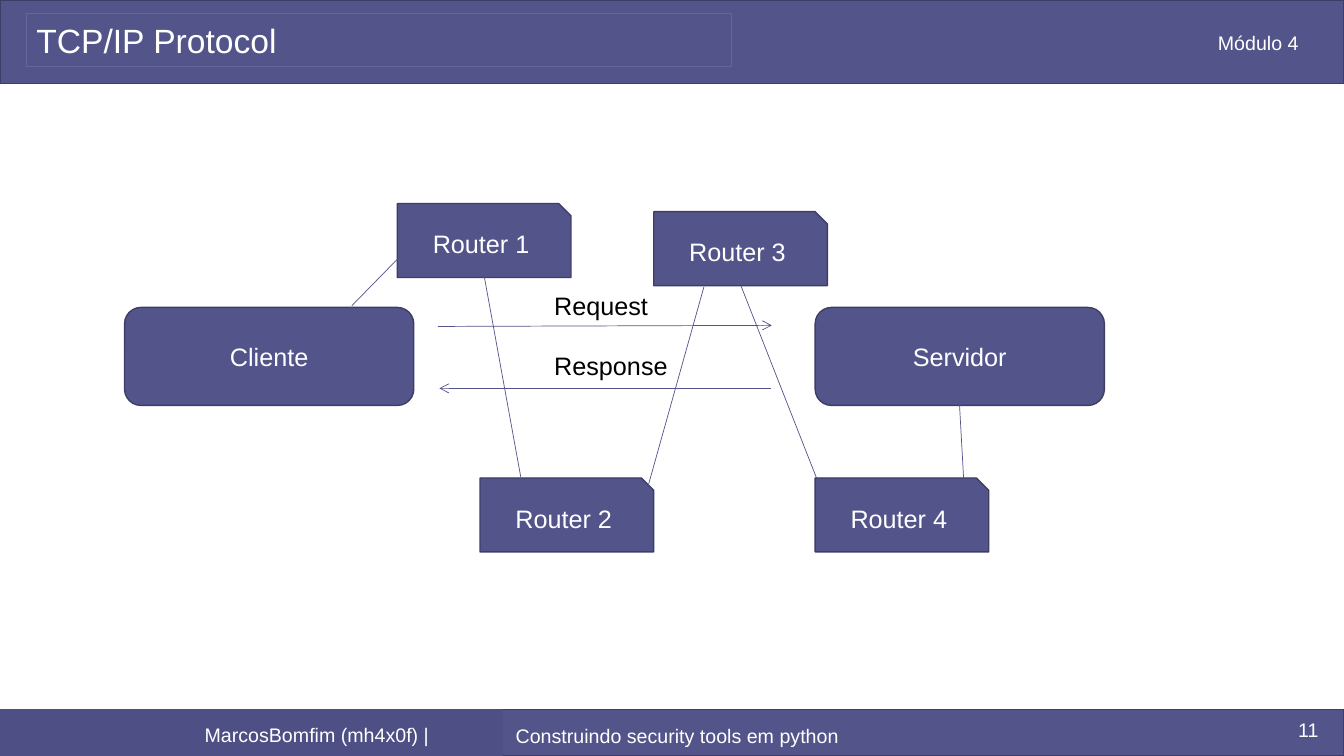
"""Build the TCP/IP protocol slide: client, server and the routers between them."""

import dataclasses
import typing

import lxml.etree
import pptx
import pptx.dml.color
import pptx.enum.shapes
import pptx.enum.text
import pptx.oxml.ns
import pptx.slide
import pptx.util

Pt = pptx.util.Pt
RGBColor = pptx.dml.color.RGBColor
ShapeKind = pptx.enum.shapes.MSO_SHAPE
Align = pptx.enum.text.PP_ALIGN
Anchor = pptx.enum.text.MSO_ANCHOR

WHITE = RGBColor(0xFF, 0xFF, 0xFF)
BLACK = RGBColor(0x00, 0x00, 0x00)
INDIGO = RGBColor(0x53, 0x54, 0x8A)
INDIGO_EDGE = RGBColor(0x3D, 0x3E, 0x66)
FOOTER_INDIGO = RGBColor(0x4E, 0x4F, 0x84)
TITLE_EDGE = RGBColor(0x66, 0x66, 0x99)

SLIDE_WIDTH, SLIDE_HEIGHT = 960, 540
HOST_TOP, HOST_WIDTH, HOST_HEIGHT = 219.6, 206.6, 70
ROUTER_WIDTH, ROUTER_HEIGHT = 124, 52.8
LOWER_ROUTER_TOP = 341.4
SERVER_LEFT = 582.3


@dataclasses.dataclass(frozen=True)
class Block:
    """A filled preset shape with an optional centred caption."""

    kind: ShapeKind
    left: float
    top: float
    width: float
    height: float
    text: str = ""
    fill: RGBColor = INDIGO
    edge: RGBColor = INDIGO_EDGE


@dataclasses.dataclass(frozen=True)
class Label:
    """A text box whose paragraphs share one format."""

    left: float
    top: float
    width: float
    height: float
    lines: tuple[str, ...]
    size: float = 14
    color: RGBColor = WHITE
    align: Align = Align.LEFT
    anchor: Anchor = Anchor.TOP
    wrap: bool = True
    gap: float = 0
    edge: typing.Optional[RGBColor] = None


@dataclasses.dataclass(frozen=True)
class Link:
    """A straight line, with an arrowhead at its end if wanted."""

    start_x: float
    start_y: float
    end_x: float
    end_y: float
    arrow: bool = False


def host(left: float, text: str) -> Block:
    """Return a rounded host block."""
    return Block(ShapeKind.ROUNDED_RECTANGLE, left, HOST_TOP, HOST_WIDTH, HOST_HEIGHT, text)


def router(left: float, top: float, text: str) -> Block:
    """Return a router block with one snipped corner."""
    return Block(ShapeKind.SNIP_1_RECTANGLE, left, top, ROUTER_WIDTH, ROUTER_HEIGHT, text)


BLOCKS = (
    Block(ShapeKind.RECTANGLE, 0, 0, SLIDE_WIDTH, 59.6),
    Block(ShapeKind.RECTANGLE, 0, 507, SLIDE_WIDTH, 33),
    Block(ShapeKind.RECTANGLE, 0, 507, 358.6, 33.5, fill=FOOTER_INDIGO, edge=FOOTER_INDIGO),
    host(89, "Cliente"),
    host(SERVER_LEFT, "Servidor"),
    router(283.9, 145.4, "Router 1"),
    router(342.9, LOWER_ROUTER_TOP, "Router 2"),
    router(467, 151.2, "Router 3"),
    router(SERVER_LEFT, LOWER_ROUTER_TOP, "Router 4"),
)

LABELS = (
    Label(139, 512.6, 226.8, 24.5, ("MarcosBomfim (mh4x0f) |",)),
    Label(841, 18.7, 119.5, 21, ("Módulo 4 ",), align=Align.CENTER),
    Label(18.9, 9.5, 504, 38.2, ("TCP/IP Protocol",), 24, anchor=Anchor.MIDDLE, edge=TITLE_EDGE),
    Label(331.9, 513.4, 303.8, 21, ("Construindo security tools em python",), align=Align.CENTER),
    Label(725, 509, 224, 37.4, ("11",), align=Align.RIGHT),
    Label(388.8, 203.8, 100.8, 72.7, ("Request", "Response"), 18, BLACK, wrap=False, gap=21.5),
)

LINKS = (
    Link(312.7, 233.2, 551.3, 232.4, arrow=True),
    Link(550.8, 277.4, 313.9, 277.4, arrow=True),
    Link(251.3, 218.4, 284, 185),
    Link(346, 198, 372, 340.8),
    Link(463, 347, 502.8, 205),
    Link(529.2, 204, 583.2, 341.3),
    Link(688.3, 341.3, 685.4, 289.4),
)


def apply(target: typing.Any, values: dict[str, typing.Any]) -> None:
    """Set each named attribute on the target."""
    for name, value in values.items():
        setattr(target, name, value)


def write(frame: typing.Any, label: typing.Any, lines: tuple[str, ...], size: float,
          color: RGBColor, align: Align, gap: float = 0) -> None:
    """Fill a text frame with equally formatted paragraphs."""
    for index, line in enumerate(lines):
        paragraph = frame.add_paragraph() if index else frame.paragraphs[0]
        apply(paragraph, {"alignment": align, "space_before": Pt(gap if index else 0)})
        run = paragraph.add_run()
        run.text = line
        apply(run.font, {"name": "Arial", "size": Pt(size)})
        run.font.color.rgb = color


def draw_block(slide: pptx.slide.Slide, block: Block) -> None:
    """Draw a block and its caption."""
    bounds = map(Pt, (block.left, block.top, block.width, block.height))
    shape = slide.shapes.add_shape(block.kind, *bounds)
    shape.shadow.inherit = False
    shape.fill.solid()
    shape.fill.fore_color.rgb = block.fill
    shape.line.color.rgb = block.edge
    shape.line.width = Pt(1)
    if block.text:
        apply(shape.text_frame, {"word_wrap": True, "vertical_anchor": Anchor.MIDDLE})
        write(shape.text_frame, block, (block.text,), 18, WHITE, Align.CENTER)


def draw_label(slide: pptx.slide.Slide, label: Label) -> None:
    """Draw a text box, framed if it has an edge colour."""
    bounds = map(Pt, (label.left, label.top, label.width, label.height))
    shape = slide.shapes.add_textbox(*bounds)
    if label.edge is not None:
        shape.line.color.rgb = label.edge
        shape.line.width = Pt(0.75)
    apply(shape.text_frame, {"word_wrap": label.wrap, "vertical_anchor": label.anchor})
    write(shape.text_frame, label, label.lines, label.size, label.color, label.align, label.gap)


def draw_link(slide: pptx.slide.Slide, link: Link) -> None:
    """Draw a thin connector without a shadow."""
    ends = map(Pt, (link.start_x, link.start_y, link.end_x, link.end_y))
    connector = slide.shapes.add_connector(pptx.enum.shapes.MSO_CONNECTOR.STRAIGHT, *ends)
    connector.line.color.rgb = INDIGO
    connector.line.width = Pt(0.5)
    properties = connector._element.spPr
    if link.arrow:
        outline = properties.find(pptx.oxml.ns.qn("a:ln"))
        lxml.etree.SubElement(outline, pptx.oxml.ns.qn("a:tailEnd"), type="arrow")
    lxml.etree.SubElement(properties, pptx.oxml.ns.qn("a:effectLst"))


def main() -> None:
    """Build and save the presentation."""
    presentation = pptx.Presentation()
    apply(presentation, {"slide_width": Pt(SLIDE_WIDTH), "slide_height": Pt(SLIDE_HEIGHT)})
    slide = presentation.slides.add_slide(presentation.slide_layouts[6])
    for block in BLOCKS:
        draw_block(slide, block)
    for label in LABELS:
        draw_label(slide, label)
    for link in LINKS:
        draw_link(slide, link)
    presentation.save("out.pptx")


if __name__ == "__main__":
    main()
